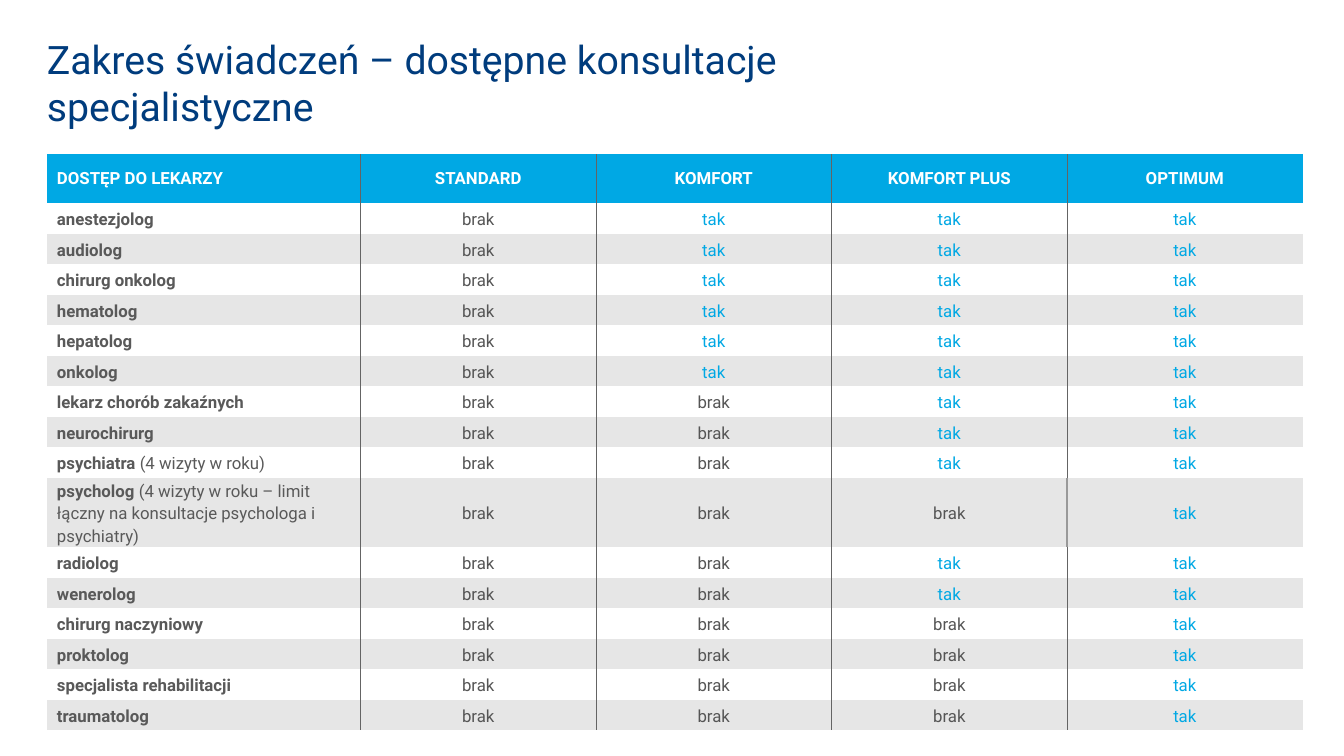
from dataclasses import dataclass

from lxml.etree import SubElement
from pptx import Presentation
from pptx.dml.color import RGBColor
from pptx.enum.text import MSO_ANCHOR, PP_ALIGN
from pptx.oxml.ns import qn
from pptx.slide import Slide
from pptx.table import Table, _Cell
from pptx.util import Pt

FONT = "Roboto"
COLORS = {
    "title": "003C7D",
    "accent": "00A8E4",
    "header_text": "FFFFFF",
    "name": "595959",
    "missing": "555555",
    "band": "E6E6E6",
    "divider": "646464",
    "light_divider": "999999",
}
NO_GRID_STYLE = "{2D5ABB26-0587-4C30-8999-92F81FD0307C}"

HEADINGS = ["DOSTĘP DO LEKARZY", "STANDARD", "KOMFORT", "KOMFORT PLUS", "OPTIMUM"]
KOMFORT, KOMFORT_PLUS, OPTIMUM = 2, 3, 4
COLUMN_WIDTHS = [224] + [168.25] * 4
HEADER_HEIGHT, ROW_HEIGHT, NOTE_ROW_HEIGHT = 35, 21.82, 33


@dataclass
class Specialist:
    name: str
    first_plan: int  # cheapest plan column that includes the specialist
    note: str = ""
    height: float = ROW_HEIGHT
    last_divider: str = "divider"
    last_divider_width: float = 0.5


SPECIALISTS = [
    Specialist("anestezjolog", KOMFORT),
    Specialist("audiolog", KOMFORT),
    Specialist("chirurg onkolog", KOMFORT),
    Specialist("hematolog", KOMFORT),
    Specialist("hepatolog", KOMFORT),
    Specialist("onkolog", KOMFORT),
    Specialist("lekarz chorób zakaźnych", KOMFORT_PLUS),
    Specialist("neurochirurg", KOMFORT_PLUS),
    Specialist("psychiatra", KOMFORT_PLUS, "(4 wizyty w roku)"),
    Specialist(
        "psycholog", OPTIMUM,
        "(4 wizyty w roku – limit łączny na konsultacje psychologa i psychiatry)",
        NOTE_ROW_HEIGHT, "light_divider", 1,
    ),
    Specialist("radiolog", KOMFORT_PLUS),
    Specialist("wenerolog", KOMFORT_PLUS),
    Specialist("chirurg naczyniowy", OPTIMUM),
    Specialist("proktolog", OPTIMUM),
    Specialist("specjalista rehabilitacji", OPTIMUM),
    Specialist("traumatolog", OPTIMUM),
]


def rgb(color: str) -> RGBColor:
    return RGBColor.from_string(COLORS[color])


def format_run(run, size: float, color: str, bold: bool = False) -> None:
    run.font.name = FONT
    run.font.size = Pt(size)
    run.font.bold = bold
    run.font.color.rgb = rgb(color)


def add_border(cell: _Cell, side: str, color: str, width: float) -> None:
    line = SubElement(cell._tc.get_or_add_tcPr(), qn(f"a:{side}"), w=str(Pt(width)))
    fill = SubElement(line, qn("a:solidFill"))
    SubElement(fill, qn("a:srgbClr"), val=COLORS[color])


def style_cell(cell: _Cell, column: int, fill: str, margin_x: float, margin_y: float,
               last_divider: str = "divider", last_width: float = 0.5) -> None:
    """Draw the inner dividers, then set the fill, margins and anchor."""
    if column > 0:
        left = (last_divider, last_width) if column == OPTIMUM else ("divider", 0.5)
        add_border(cell, "lnL", *left)
    if column < OPTIMUM:
        right = (last_divider, last_width) if column == OPTIMUM - 1 else ("divider", 0.5)
        add_border(cell, "lnR", *right)
    if fill:
        cell.fill.solid()
        cell.fill.fore_color.rgb = rgb(fill)
    else:
        cell.fill.background()
    cell.margin_left = cell.margin_right = Pt(margin_x)
    cell.margin_top = cell.margin_bottom = Pt(margin_y)
    cell.vertical_anchor = MSO_ANCHOR.MIDDLE


def fill_header(table: Table) -> None:
    table.rows[0].height = Pt(HEADER_HEIGHT)
    for column, heading in enumerate(HEADINGS):
        cell = table.cell(0, column)
        style_cell(cell, column, "accent", 7.2, 3.6)
        paragraph = cell.text_frame.paragraphs[0]
        paragraph.text = heading
        if column:
            paragraph.alignment = PP_ALIGN.CENTER
        format_run(paragraph.runs[0], 12, "header_text", bold=True)


def fill_specialist(table: Table, row: int, specialist: Specialist) -> None:
    table.rows[row].height = Pt(specialist.height)
    band = "" if row % 2 else "band"
    for column in range(len(HEADINGS)):
        cell = table.cell(row, column)
        missing = 0 < column < specialist.first_plan
        style_cell(cell, column, band, 3.6 if missing else 1.44, 0,
                   specialist.last_divider, specialist.last_divider_width)
        paragraph = cell.text_frame.paragraphs[0]
        paragraph.line_spacing = 1.15
        if column == 0:
            paragraph._p.get_or_add_pPr().set("marL", str(Pt(5.76)))
            paragraph.text = specialist.name + (" " if specialist.note else "")
            format_run(paragraph.runs[0], 12, "name", bold=True)
            if specialist.note:
                note = paragraph.add_run()
                note.text = specialist.note
                format_run(note, 12, "name")
        else:
            paragraph.text = "brak" if missing else "tak"
            paragraph.alignment = PP_ALIGN.CENTER
            format_run(paragraph.runs[0], 12, "missing" if missing else "accent")


def add_title(slide: Slide) -> None:
    title = slide.shapes.add_textbox(Pt(33.5), Pt(37.5), Pt(707), Pt(42.5)).text_frame
    title.text = "Zakres świadczeń – dostępne konsultacje specjalistyczne"
    title.word_wrap = True
    title.vertical_anchor = MSO_ANCHOR.MIDDLE
    title.margin_left = title.margin_right = title.margin_top = title.margin_bottom = 0
    format_run(title.paragraphs[0].runs[0], 28, "title")


def add_benefits_table(slide: Slide) -> None:
    height = HEADER_HEIGHT + sum(specialist.height for specialist in SPECIALISTS)
    benefits = slide.shapes.add_table(
        len(SPECIALISTS) + 1, len(HEADINGS),
        Pt(33.5), Pt(110), Pt(sum(COLUMN_WIDTHS)), Pt(height),
    ).table
    benefits._tbl.tblPr.find(qn("a:tableStyleId")).text = NO_GRID_STYLE
    for column, width in zip(benefits.columns, COLUMN_WIDTHS):
        column.width = Pt(width)
    fill_header(benefits)
    for row, specialist in enumerate(SPECIALISTS, start=1):
        fill_specialist(benefits, row, specialist)


def main() -> None:
    presentation = Presentation()
    presentation.slide_width, presentation.slide_height = Pt(960), Pt(540)
    slide = presentation.slides.add_slide(presentation.slide_layouts[6])
    # Heading
    add_title(slide)
    # Plans compared by specialist
    add_benefits_table(slide)
    presentation.save("out.pptx")


if __name__ == "__main__":
    main()
